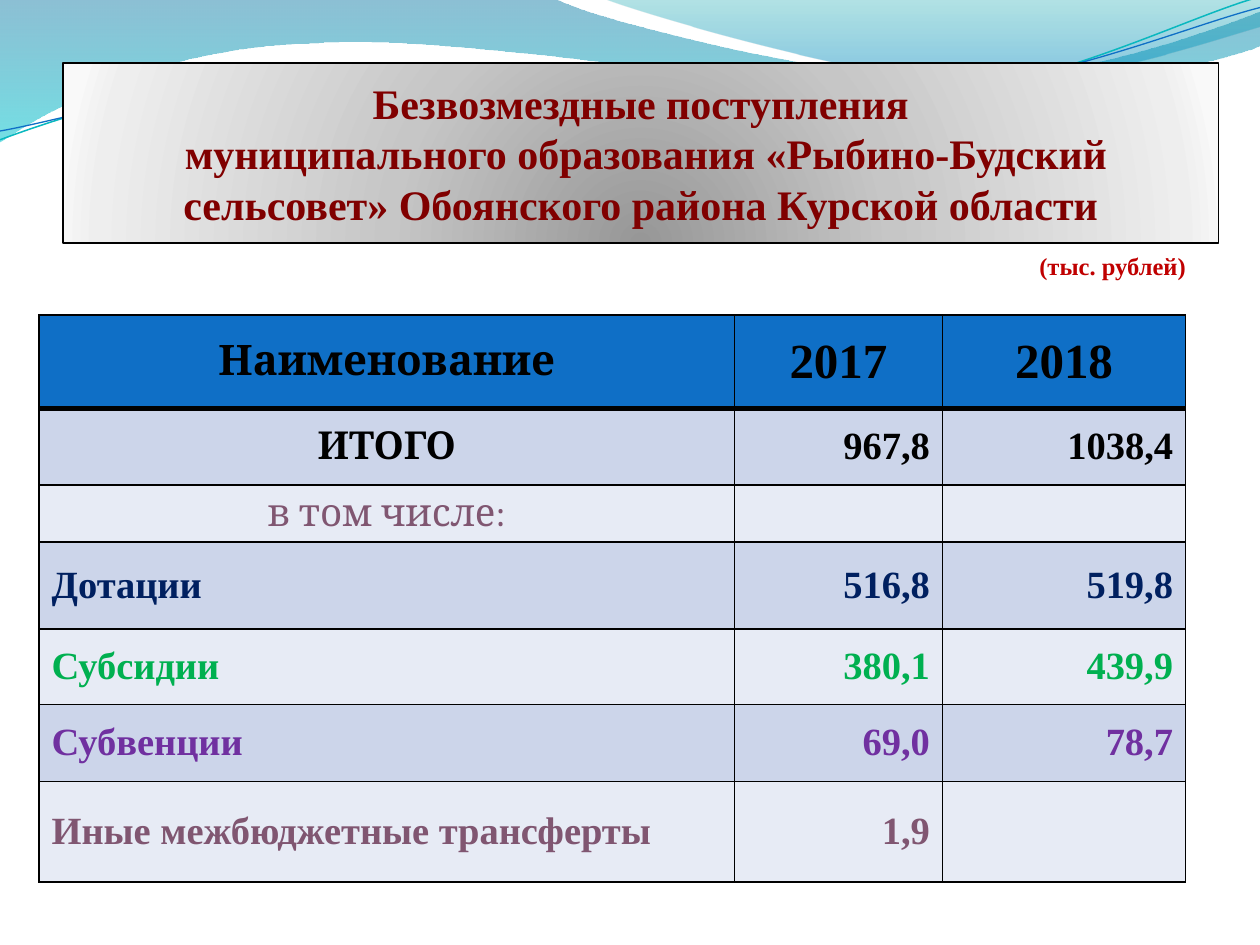
from dataclasses import dataclass

from lxml import etree
from pptx import Presentation
from pptx.dml.color import RGBColor
from pptx.enum.text import MSO_ANCHOR, MSO_AUTO_SIZE, PP_ALIGN
from pptx.oxml import parse_xml
from pptx.oxml.ns import nsdecls, qn
from pptx.util import Inches, Pt


@dataclass(frozen=True)
class Theme:
    serif: str = "Times New Roman"
    heading: str = "Cambria"
    black: str = "000000"
    title: str = "800000"
    unit: str = "C00000"
    header: str = "0F6FC6"
    bands: tuple = ("CCD5EA", "E7EBF5")
    mauve: str = "805671"
    navy: str = "002060"
    green: str = "00B050"
    violet: str = "7030A0"
    teal_line: str = "0AB8BF"
    blue_line: str = "0F6FC6"
    title_size: int = 24
    unit_size: int = 14
    header_size: int = 24
    year_size: int = 28
    body_size: int = 22


theme = Theme()


def fill_gradient(shape, stops, direction):
    """Fill with (position %, colour, opacity %) stops."""
    shape.fill.solid()
    solid = shape._element.spPr.find(qn("a:solidFill"))
    stop_xml = "".join(
        f'<a:gs pos="{position * 1000}"><a:srgbClr val="{color}">'
        f'<a:alpha val="{opacity * 1000}"/></a:srgbClr></a:gs>'
        for position, color, opacity in stops)
    solid.getparent().replace(solid, parse_xml(
        f'<a:gradFill {nsdecls("a")} rotWithShape="1">'
        f'<a:gsLst>{stop_xml}</a:gsLst>{direction}</a:gradFill>'))


def format_text(paragraph, font_name, size, color, bold=True):
    for run in paragraph.runs:
        run.font.name = font_name
        run.font.size = Pt(size)
        run.font.bold = bold
        run.font.color.rgb = RGBColor.from_string(color)


prs = Presentation()
prs.slide_width, prs.slide_height = Inches(10), Inches(7.5)
slide = prs.slides.add_slide(prs.slide_layouts[5])

# Waves in hundredths of an inch: two numbers make a straight line,
# six a Bézier curve
DOWN = '<a:lin ang="5400000" scaled="1"/>'
waves = [
    dict(path=[(0, 0), (440, -1), (476, 17, 664, 63, 758, 63),
               (853, 63, 958, 26, 1000, 9), (1001, 36),
               (983, 44, 870, 76, 746, 75), (622, 75, 382, 28, 257, 34),
               (129, 36, 46, 83, -1, 113)],
         stops=[(0, "0074A1", 45), (100, "00C6CF", 55)]),
    dict(path=[(479, -1), (509, 11, 682, 62, 769, 65),
               (856, 69, 961, 32, 1000, 21), (1000, 0)],
         stops=[(0, "00A1A9", 30), (80, "008BBF", 45)]),
    dict(path=[(0, 111), (48, 93, 158, 57, 277, 52),
               (395, 47, 593, 89, 713, 80), (833, 71, 938, 15, 998, -2)],
         line=(theme.teal_line, 0.85)),
    dict(path=[(0, 104), (47, 96, 164, 61, 283, 56),
               (403, 51, 597, 84, 717, 75), (836, 67, 941, 21, 1000, 6)],
         line=(theme.blue_line, 0.75)),
]
for wave in waves:
    start, *segments = wave["path"]
    ends = [segment[-2:] for segment in segments]
    builder = slide.shapes.build_freeform(*start, scale=Inches(0.01))
    builder.add_line_segments(ends, close="stops" in wave)
    ribbon = builder.convert_to_shape()
    left = min(x for x, y in [start, *ends])
    top = min(y for x, y in [start, *ends])

    # Bend the straight segments that have control points
    straight_lines = list(ribbon._element.iter(qn("a:lnTo")))
    for straight, segment in zip(straight_lines, segments):
        if len(segment) == 6:
            curve = etree.Element(qn("a:cubicBezTo"))
            for x, y in zip(segment[::2], segment[1::2]):
                etree.SubElement(curve, qn("a:pt"), x=str(x - left), y=str(y - top))
            straight.getparent().replace(straight, curve)

    ribbon.shadow.inherit = False
    if "stops" in wave:
        fill_gradient(ribbon, wave["stops"], DOWN)
        ribbon.line.fill.background()
    else:
        color, width = wave["line"]
        ribbon.fill.background()
        ribbon.line.color.rgb = RGBColor.from_string(color)
        ribbon.line.width = Pt(width)

# Table of transfers: label, two years, colour
rows = [
    ("Наименование", "2017", "2018", theme.black),
    ("ИТОГО", "967,8", "1038,4", theme.black),
    ("в том числе:", "", "", theme.mauve),
    ("Дотации", "516,8", "519,8", theme.navy),
    ("Субсидии", "380,1", "439,9", theme.green),
    ("Субвенции", "69,0", "78,7", theme.violet),
    ("Иные межбюджетные трансферты", "1,9", "", theme.mauve),
]
column_widths = [5.52, 1.65, 1.93]
row_heights = [0.74, 0.61, 0.45, 0.69, 0.6, 0.61, 0.8]
transfers = slide.shapes.add_table(
    len(rows), len(column_widths), Inches(0.31), Inches(2.5),
    Inches(sum(column_widths)), Inches(sum(row_heights))).table
for column, width in zip(transfers.columns, column_widths):
    column.width = Inches(width)
for r, (*texts, color) in enumerate(rows):
    transfers.rows[r].height = Inches(row_heights[r])
    for c, text in enumerate(texts):
        cell = transfers.cell(r, c)
        cell.text = text
        cell.vertical_anchor = MSO_ANCHOR.MIDDLE
        paragraph = cell.text_frame.paragraphs[0]
        if r == 0 or (c == 0 and r < 3):
            paragraph.alignment = PP_ALIGN.CENTER
        else:
            paragraph.alignment = PP_ALIGN.RIGHT if c else PP_ALIGN.LEFT
        if r == 0:
            size = theme.year_size if c else theme.header_size
        else:
            size = theme.body_size
        font_name = theme.heading if c == 0 and r < 3 else theme.serif
        format_text(paragraph, font_name, size, color, bold=r != 2)

        # Borders come before the fill in the cell properties
        properties = cell._tc.get_or_add_tcPr()
        for side in "LRTB":
            heavy = (r, side) in ((0, "B"), (1, "T"))
            border = etree.SubElement(properties, qn(f"a:ln{side}"),
                                      w=str(Pt(3 if heavy else 1)))
            solid = etree.SubElement(border, qn("a:solidFill"))
            etree.SubElement(solid, qn("a:srgbClr"), val=theme.black)
        cell.fill.solid()
        band = theme.bands[(r - 1) % 2] if r else theme.header
        cell.fill.fore_color.rgb = RGBColor.from_string(band)

# Title panel, in front of the waves
title = slide.shapes.title
slide.shapes._spTree.append(title._element)
title.left, title.top = Inches(0.5), Inches(0.5)
title.width, title.height = Inches(9.17), Inches(1.43)
fill_gradient(
    title,
    [(0, "979797", 100), (43, "C6C6C6", 100), (93, "EEEEEE", 100), (100, "F9F9F9", 100)],
    '<a:path path="circle"><a:fillToRect l="50000" t="130000" r="50000" b="-30000"/></a:path>')
title.line.color.rgb = RGBColor.from_string(theme.black)
title.line.width = Pt(0.75)
title.shadow.inherit = False
title.text_frame.text = ("Безвозмездные поступления\v муниципального образования "
                         "«Рыбино-Будский сельсовет» Обоянского района Курской области")
title.text_frame.word_wrap = True
title.text_frame.auto_size = MSO_AUTO_SIZE.NONE
title.text_frame.vertical_anchor = MSO_ANCHOR.MIDDLE
title.text_frame.paragraphs[0].alignment = PP_ALIGN.CENTER
format_text(title.text_frame.paragraphs[0], theme.serif, theme.title_size, theme.title)

# Unit of measure
unit = slide.shapes.add_textbox(Inches(8.15), Inches(1.94), Inches(1.42), Inches(0.33))
unit.text_frame.text = "(тыс. рублей)"
unit.text_frame.word_wrap = True
format_text(unit.text_frame.paragraphs[0], theme.serif, theme.unit_size, theme.unit)

prs.save("out.pptx")
